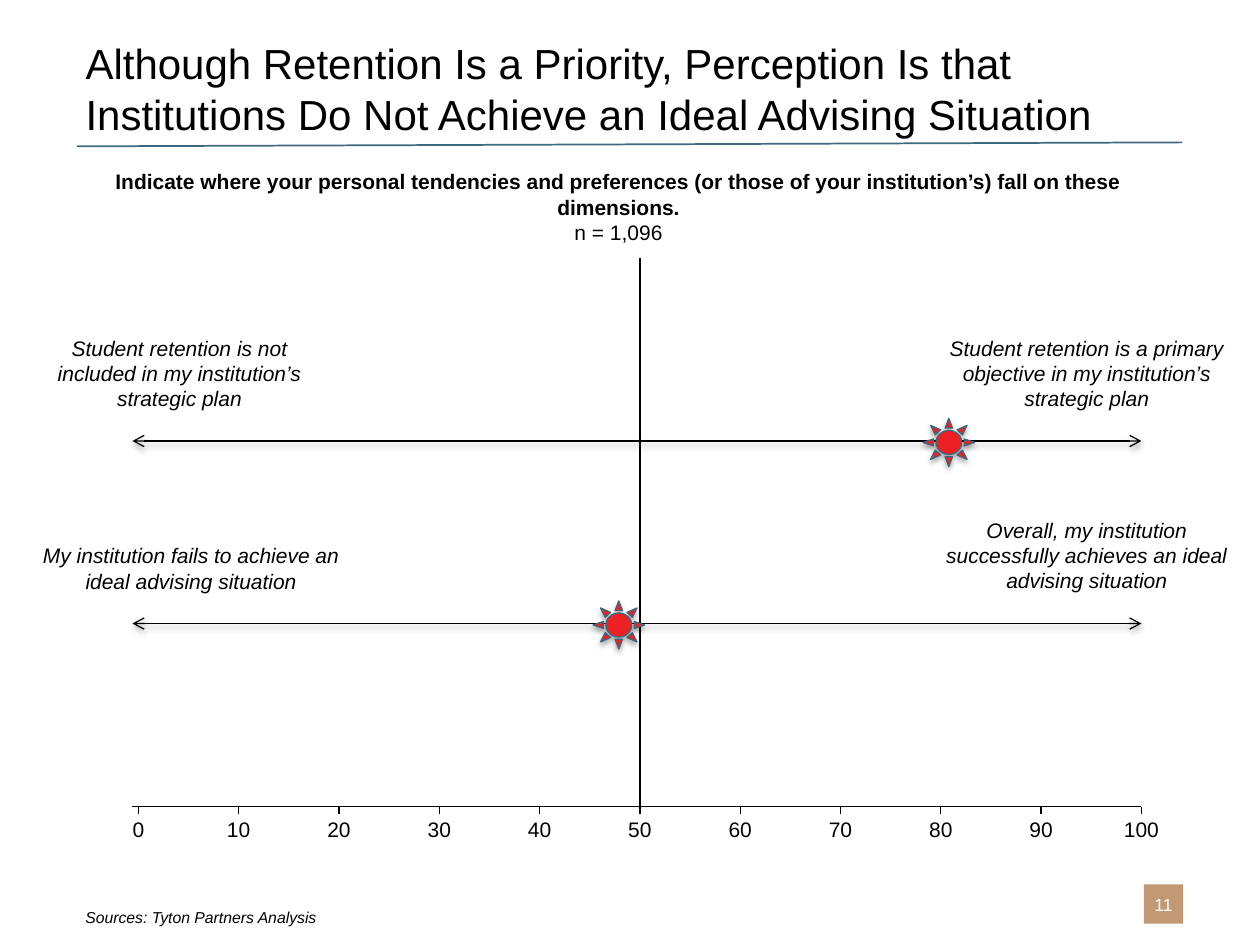
from lxml.etree import SubElement
from pptx import Presentation
from pptx.dml.color import RGBColor
from pptx.enum.shapes import MSO_CONNECTOR, MSO_SHAPE
from pptx.enum.text import MSO_ANCHOR, MSO_AUTO_SIZE, PP_ALIGN
from pptx.oxml.ns import qn
from pptx.util import Cm, Pt

BLACK = "000000"
AXIS_LEFT, AXIS_STEP, AXIS_TOP = 2.79, 2.022, 16.26
ROW_START = 2.67

DIMENSIONS = [
    (8.89, 80.8,
     ("Student retention is not included in my institution’s strategic plan", 0.38, 6.63, 6.48),
     ("Student retention is a primary objective in my institution’s strategic plan", 18.67, 6.63, 6.48)),
    (12.57, 47.9,
     ("My institution fails to achieve an ideal advising situation", 0.58, 10.82, 6.55),
     ("Overall, my institution successfully achieves an ideal advising situation", 18.67, 10.31, 6.48)),
]


def color(value):
    return RGBColor.from_string(value)


def axis_x(score):
    return AXIS_LEFT + AXIS_STEP * score / 10


class SlideBuilder:
    font = "Arial"

    def __init__(self, slide):
        self.slide = slide

    def fill_text(self, frame, paragraphs, size, align=PP_ALIGN.CENTER,
                  anchor=MSO_ANCHOR.TOP, ink=BLACK, italic=False, inset=None):
        frame.word_wrap = True
        frame.auto_size = MSO_AUTO_SIZE.NONE
        frame.vertical_anchor = anchor
        if inset is not None:
            frame.margin_left = frame.margin_right = Cm(inset)
            frame.margin_top = frame.margin_bottom = Cm(inset)
        for index, (words, bold) in enumerate(paragraphs):
            paragraph = frame.paragraphs[0] if index == 0 else frame.add_paragraph()
            paragraph.alignment = align
            run = paragraph.add_run()
            run.text = words
            run.font.name = self.font
            run.font.size = Pt(size)
            run.font.bold = bold
            run.font.italic = italic
            run.font.color.rgb = color(ink)

    def title(self, words, left, top, width, height):
        heading = self.slide.shapes.title
        heading.left, heading.top = Cm(left), Cm(top)
        heading.width, heading.height = Cm(width), Cm(height)
        self.fill_text(heading.text_frame, [(words, False)], 24,
                       PP_ALIGN.LEFT, MSO_ANCHOR.BOTTOM)

    def text(self, paragraphs, left, top, width, height, size=12, **style):
        box = self.slide.shapes.add_textbox(Cm(left), Cm(top), Cm(width), Cm(height))
        self.fill_text(box.text_frame, paragraphs, size, **style)

    def effects(self, shape, opacity=None, distance=0):
        properties = shape._element.spPr
        for previous in properties.findall(qn("a:effectLst")):
            properties.remove(previous)
        effect_list = SubElement(properties, qn("a:effectLst"))
        if opacity:
            shadow = SubElement(effect_list, qn("a:outerShdw"), blurRad=str(Pt(3.1)),
                                dist=str(Pt(distance)), dir="5400000", rotWithShape="0")
            tint = SubElement(shadow, qn("a:srgbClr"), val=BLACK)
            SubElement(tint, qn("a:alpha"), val=str(opacity * 1000))

    def line(self, x1, y1, x2, y2, ink=BLACK, width=0.75):
        connector = self.slide.shapes.add_connector(
            MSO_CONNECTOR.STRAIGHT, Cm(x1), Cm(y1), Cm(x2), Cm(y2))
        connector.line.color.rgb = color(ink)
        connector.line.width = Pt(width)
        self.effects(connector)
        return connector

    def double_arrow(self, x1, x2, y):
        arrow = self.line(x1, y, x2, y)
        outline = arrow._element.spPr.find(qn("a:ln"))
        for end in ("a:headEnd", "a:tailEnd"):
            SubElement(outline, qn(end), type="arrow")
        self.effects(arrow, 38, 1.6)

    def shape(self, preset, left, top, width, height, fill, outline=None):
        item = self.slide.shapes.add_shape(preset, Cm(left), Cm(top), Cm(width), Cm(height))
        item.shadow.inherit = False
        item.fill.solid()
        item.fill.fore_color.rgb = color(fill)
        if outline:
            item.line.color.rgb = color(outline)
            item.line.width = Pt(0.75)
        else:
            item.line.fill.background()
        return item

    def score_sun(self, score, y):
        width, height = 1.04, 0.97
        sun = self.shape(MSO_SHAPE.SUN, axis_x(score) - width / 2, y + 0.03 - height / 2,
                         width, height, "ED2125", "3C677D")
        self.effects(sun, 35, 1.8)

    def page_number(self, number):
        badge = self.shape(MSO_SHAPE.RECTANGLE, 23.06, 17.83, 0.79, 0.79, "C39874")
        self.fill_text(badge.text_frame, [(number, False)], 10,
                       anchor=MSO_ANCHOR.MIDDLE, ink="FFFFFF", inset=0)


def main():
    deck = Presentation()
    deck.slide_width, deck.slide_height = Cm(25.4), Cm(19.05)
    page = SlideBuilder(deck.slides.add_slide(deck.slide_layouts[5]))

    page.title("Although Retention Is a Priority, Perception Is that Institutions "
               "Do Not Achieve an Ideal Advising Situation", 1.47, 0.28, 22.4, 2.64)
    page.line(1.55, 2.95, 23.83, 2.87, "3F697E", 1)
    page.page_number("11")
    page.text([("Sources: Tyton Partners Analysis", False)], 1.47, 17.02, 17.48, 1.78,
              size=9, align=PP_ALIGN.LEFT, anchor=MSO_ANCHOR.BOTTOM, italic=True)
    page.text([("Indicate where your personal tendencies and preferences (or those of your "
                "institution’s) fall on these dimensions.", True), ("n = 1,096", False)],
              1.14, 3.28, 22.66, 1.8)

    page.line(axis_x(50), 5.21, axis_x(50), AXIS_TOP)
    page.line(ROW_START, AXIS_TOP, axis_x(100), AXIS_TOP)
    for score in range(0, 101, 10):
        x = axis_x(score)
        page.line(x, AXIS_TOP, x, AXIS_TOP + 0.15)
        page.text([(str(score), False)], x - 0.6, 16.46, 1.2, 0.51, inset=0)

    for y, score, *statements in DIMENSIONS:
        for words, left, top, width in statements:
            page.text([(words, False)], left, top, width, 1.8, italic=True)
        page.double_arrow(ROW_START, axis_x(100), y)
        page.score_sun(score, y)

    deck.save("out.pptx")


if __name__ == "__main__":
    main()
